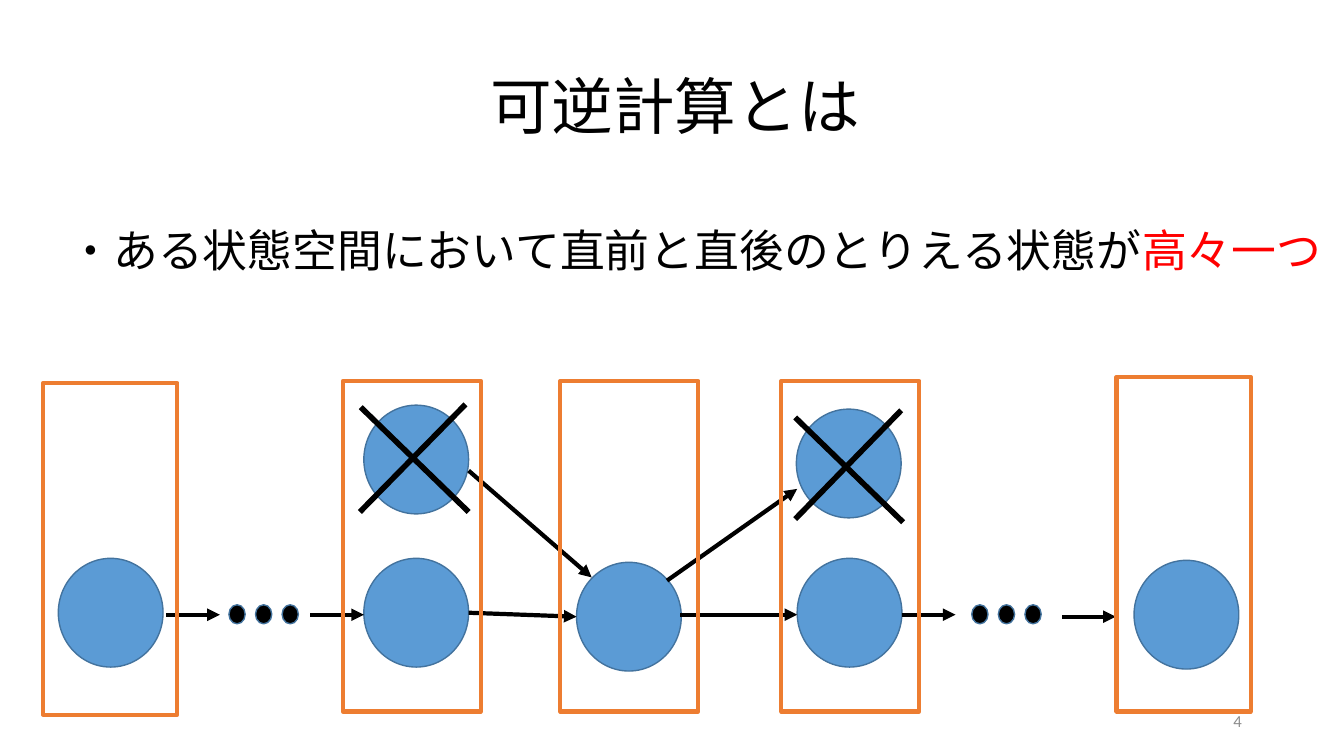
"""Build a slide that explains reversible computation with a chain of states."""
from lxml.etree import SubElement
from pptx import Presentation
from pptx.dml.color import RGBColor
from pptx.enum.shapes import MSO_CONNECTOR, MSO_SHAPE
from pptx.enum.text import MSO_ANCHOR, MSO_AUTO_SIZE, PP_ALIGN
from pptx.oxml.ns import qn
from pptx.util import Cm, Pt

BLACK = RGBColor(0x00, 0x00, 0x00)
RED = RGBColor(0xFF, 0x00, 0x00)
GREY = RGBColor(0x8C, 0x8C, 0x8C)
BLUE = RGBColor(0x5B, 0x9B, 0xD5)
DARK_BLUE = RGBColor(0x43, 0x73, 0x9E)
ORANGE = RGBColor(0xED, 0x7D, 0x31)

presentation = Presentation()
presentation.slide_width = Cm(33.87)
presentation.slide_height = Cm(19.05)
slide = presentation.slides.add_slide(presentation.slide_layouts[1])
title, body = slide.placeholders
number = slide.shapes.add_textbox(0, 0, 0, 0)

texts = [
    (title, (2.41, 0.91, 29.21, 3.68), MSO_ANCHOR.MIDDLE, PP_ALIGN.CENTER, 0.9, 44,
     [("可逆計算とは", BLACK)]),
    (body, (1.47, 5.49, 34.14, 1.63), MSO_ANCHOR.TOP, PP_ALIGN.LEFT, 1.0, 32,
     [("・ある状態空間において直前と直後のとりえる状態が", BLACK), ("高々一つ", RED)]),
    (number, (23.93, 17.65, 7.62, 1.02), MSO_ANCHOR.MIDDLE, PP_ALIGN.RIGHT, 1.0, 12,
     [("4", GREY)]),
]
for shape, box, anchor, alignment, line_spacing, size, runs in texts:
    shape.left, shape.top, shape.width, shape.height = [Cm(length) for length in box]
    frame = shape.text_frame
    frame.word_wrap = True
    frame.auto_size = MSO_AUTO_SIZE.NONE
    frame.vertical_anchor = anchor
    paragraph = frame.paragraphs[0]
    paragraph.alignment = alignment
    paragraph.line_spacing = line_spacing
    paragraph.space_before = Pt(0)
    for text, color in runs:
        run = paragraph.add_run()
        run.text = text
        run.font.name = "Calibri"
        run.font.size = Pt(size)
        run.font.color.rgb = color

body_properties = body.text_frame.paragraphs[0]._p.get_or_add_pPr()
body_properties.set("marL", "0")
body_properties.set("indent", "0")
SubElement(body_properties, qn("a:buNone"))


def add_outlined(kind, left, top, width, height, fill, line, weight):
    shape = slide.shapes.add_shape(kind, Cm(left), Cm(top), Cm(width), Cm(height))
    shape.shadow.inherit = False
    if fill is None:
        shape.fill.background()
    else:
        shape.fill.solid()
        shape.fill.fore_color.rgb = fill
    shape.line.color.rgb = line
    shape.line.width = Pt(weight)


def add_line(start_x, start_y, end_x, end_y, weight, arrow):
    connector = slide.shapes.add_connector(
        MSO_CONNECTOR.STRAIGHT, Cm(start_x), Cm(start_y), Cm(end_x), Cm(end_y))
    connector.line.color.rgb = BLACK
    connector.line.width = Pt(weight)
    if arrow:
        SubElement(connector.line._get_or_add_ln(), qn("a:tailEnd"), type="triangle")
    SubElement(connector._element.spPr, qn("a:effectLst"))


states = [(1.47, 14.07), (9.17, 14.07), (14.53, 14.17), (20.09, 14.07),
          (28.58, 14.12), (9.17, 10.21), (20.07, 10.31)]
for left, top in states:
    add_outlined(MSO_SHAPE.FLOWCHART_CONNECTOR, left, top, 2.64, 2.74, BLUE, DARK_BLUE, 1)

for first_dot in (5.77, 24.49):
    for index in range(3):
        add_outlined(MSO_SHAPE.FLOWCHART_CONNECTOR, first_dot + index * 0.67, 15.24,
                     0.41, 0.48, BLACK, DARK_BLUE, 1)

transitions = [
    (4.19, 15.49, 5.54, 15.49),
    (7.82, 15.49, 9.17, 15.49),
    (11.81, 15.44, 14.53, 15.54),
    (17.15, 15.49, 20.09, 15.49),
    (22.73, 15.49, 24.08, 15.49),
    (26.77, 15.54, 28.12, 15.54),
    (11.81, 11.86, 14.91, 14.55),
    (16.81, 14.63, 20.09, 12.32),
]
for ends in transitions:
    add_line(*ends, 3, True)

cross_strokes = [
    (9.09, 10.26, 11.81, 12.9),
    (9.07, 12.9, 11.73, 10.19),
    (20.04, 10.52, 22.76, 13.16),
    (20.04, 13.08, 22.71, 10.34),
]
for ends in cross_strokes:
    add_line(*ends, 4, False)

step_frames = [
    (1.09, 9.65, 3.38, 8.36),
    (8.64, 9.6, 3.48, 8.33),
    (14.12, 9.6, 3.48, 8.33),
    (19.69, 9.6, 3.48, 8.33),
    (28.14, 9.5, 3.38, 8.43),
]
for box in step_frames:
    add_outlined(MSO_SHAPE.RECTANGLE, *box, None, ORANGE, 3)

presentation.save("out.pptx")
